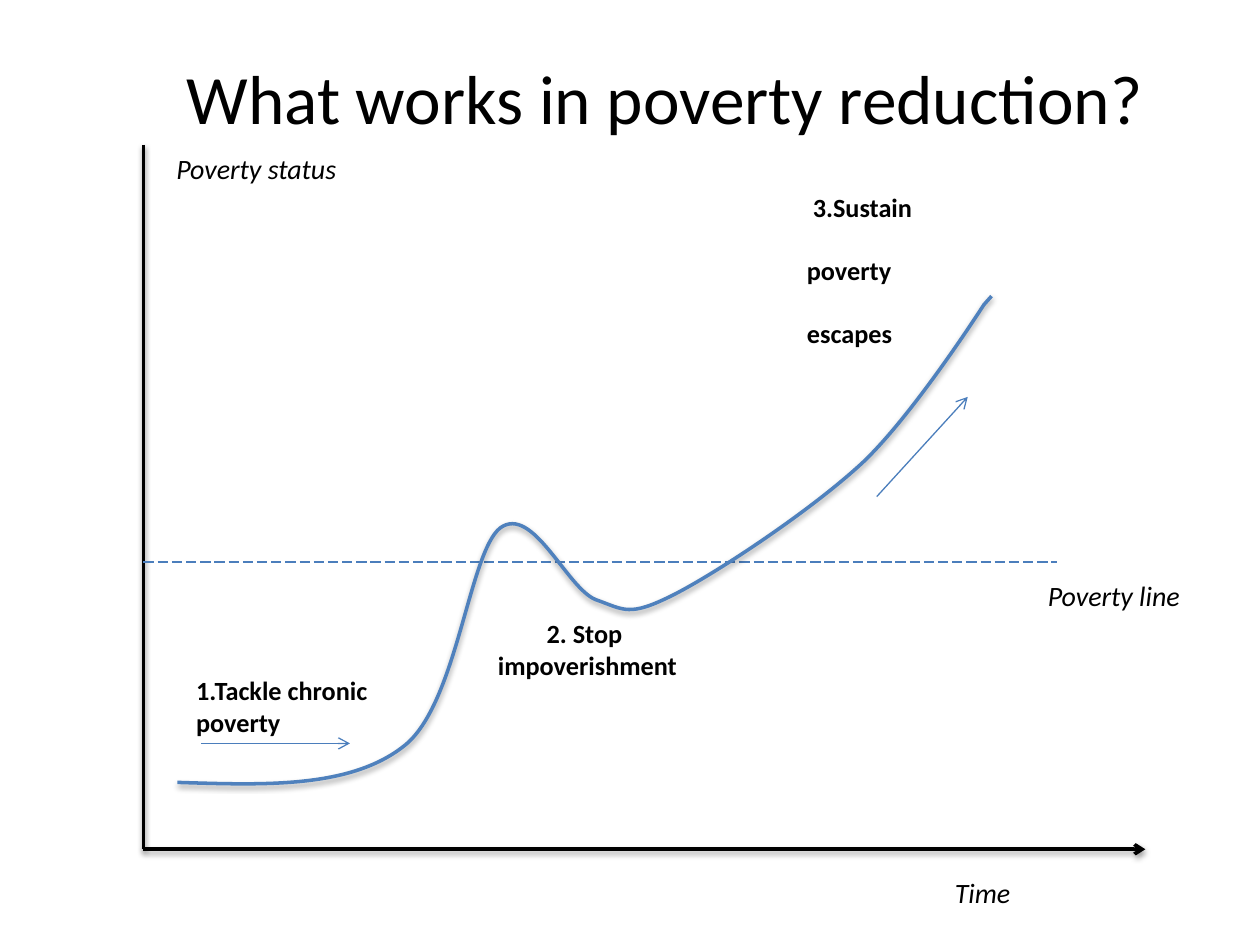
from lxml import etree
from pptx import Presentation
from pptx.dml.color import RGBColor
from pptx.enum.dml import MSO_LINE
from pptx.enum.shapes import MSO_CONNECTOR
from pptx.enum.text import MSO_ANCHOR, PP_ALIGN
from pptx.oxml import parse_xml
from pptx.oxml.ns import qn
from pptx.util import Pt

STRAIGHT = MSO_CONNECTOR.STRAIGHT
LONG_DASH = MSO_LINE.LONG_DASH
LEFT, CENTER = PP_ALIGN.LEFT, PP_ALIGN.CENTER
TOP, MIDDLE = MSO_ANCHOR.TOP, MSO_ANCHOR.MIDDLE

BLACK, BLUE, CURVE_BLUE = "000000", "4B7EBC", "4F81BD"
FONT = "Calibri"
SHADOW = (
    '<a:effectLst xmlns:a="http://schemas.openxmlformats.org/drawingml/2006/main">'
    '<a:outerShdw blurRad="40000" dist="20000" dir="5400000" rotWithShape="0">'
    '<a:srgbClr val="000000"><a:alpha val="38000"/></a:srgbClr>'
    '</a:outerShdw></a:effectLst>'
)

# Start point, then groups of two control points and an end point;
# what is left after the last whole group is straight.
CURVE = [
    (19.4, 364.3),
    (68.4, 365.8), (118.1, 367.9), (149, 343.4),
    (179.3, 319.7), (185.8, 233.3), (203.8, 218.9),
    (222.5, 205.2), (241.9, 253.4), (258.5, 259.9),
    (275, 265.7), (277.2, 270), (303.1, 257),
    (328.3, 244.1), (381.6, 208.8), (411.1, 181.4),
    (440.6, 153.4), (480.2, 91.4), (480.2, 91.4),
    (484.6, 86.4),
]


def color(hex_string):
    return RGBColor.from_string(hex_string)


def place(sp, x, y, w, h):
    sp.left, sp.top, sp.width, sp.height = Pt(x), Pt(y), Pt(w), Pt(h)


def write(sp, text, size=16, bold=False, italic=False, align=LEFT,
          anchor=TOP, wrap=True, gap=None):
    """Fill a shape with one paragraph per line, gap points apart."""
    tf = sp.text_frame
    tf.word_wrap = wrap
    tf.vertical_anchor = anchor
    for i, line in enumerate(text.split("\n")):
        p = tf.add_paragraph() if i else tf.paragraphs[0]
        p.alignment = align
        if i and gap:
            p.space_before = Pt(gap)
        r = p.add_run()
        r.text = line
        font = r.font
        font.name, font.size = FONT, Pt(size)
        font.bold, font.italic = bold, italic
        font.color.rgb = color(BLACK)


def add_label(slide, text, x, y, w, h, **style):
    sp = slide.shapes.add_textbox(Pt(x), Pt(y), Pt(w), Pt(h))
    write(sp, text, **style)


def add_line(slide, start, end, hex_color=BLUE, width=0.75, dash=None,
             arrow=False, shadow=False):
    s = slide.shapes.add_connector(STRAIGHT, *map(Pt, start + end))
    s.line.color.rgb = color(hex_color)
    s.line.width = Pt(width)
    if dash:
        s.line.dash_style = dash
    if arrow:
        etree.SubElement(s.line._get_or_add_ln(), qn("a:tailEnd"), type="arrow")
    sp_pr = s._element.spPr
    if shadow:
        sp_pr.append(parse_xml(SHADOW))
    else:
        etree.SubElement(sp_pr, qn("a:effectLst"))


def add_curve(slide, points):
    """Draw a freeform whose points are regrouped into cubic Béziers."""
    points = [(Pt(x), Pt(y)) for x, y in points]
    builder = slide.shapes.build_freeform(*points[0])
    builder.add_line_segments(points[1:], close=False)
    s = builder.convert_to_shape()
    s.fill.background()
    s.line.color.rgb = color(CURVE_BLUE)
    s.line.width = Pt(2)
    s._element.spPr.append(parse_xml(SHADOW))
    steps = list(s._element.iter(qn("a:lnTo")))
    for i in range(0, len(steps) - 2, 3):
        bezier = etree.Element(qn("a:cubicBezTo"))
        steps[i].addprevious(bezier)
        for step in steps[i:i + 3]:
            bezier.append(step[0])
            step.getparent().remove(step)


def add_heading(slide, x, y, w, h):
    title = slide.shapes.title
    place(title, x, y, w, h)
    write(title, "What works in poverty reduction?", size=39.6, anchor=MIDDLE)


def add_poverty_graph(slide, x, y, w, h):
    """Draw axes from the box's left and bottom edges, with curve and labels."""
    def at(dx, dy):
        return x + dx, y + dy

    status = slide.placeholders[1]
    place(status, *at(2, 0), 125, 57)
    write(status, "Poverty status", italic=True, align=CENTER)

    axis = {"hex_color": BLACK, "width": 2, "shadow": True}
    add_line(slide, at(0, 0), at(0, h), **axis)
    add_line(slide, at(0, h), at(w, h), arrow=True, **axis)
    add_line(slide, at(0, 238.3), at(522, 238.3), dash=LONG_DASH)

    add_line(slide, at(33, 342), at(118, 342), arrow=True)
    add_line(slide, at(419, 201), at(471, 144), arrow=True)
    stage = {"size": 15, "bold": True, "wrap": False}
    add_label(slide, "1.Tackle chronic\npoverty", *at(23, 299), 117, 44, **stage)
    add_label(slide, "2. Stop\n impoverishment", *at(191.5, 266.5), 121, 44,
              align=CENTER, **stage)
    add_label(slide, " 3.Sustain\npoverty\nescapes", *at(372, 23), 78.5, 98,
              gap=18, **stage)

    add_curve(slide, [at(*point) for point in CURVE])
    for text, dx, dy in (("Time", 417, 414), ("Poverty line", 492, 244)):
        add_label(slide, text, *at(dx, dy), 125, 28, italic=True, align=CENTER)


def main():
    prs = Presentation()
    prs.slide_width, prs.slide_height = Pt(720), Pt(540)
    slide = prs.slides.add_slide(prs.slide_layouts[0])
    add_heading(slide, 99.4, 21, 578, 68.4)
    add_poverty_graph(slide, 82, 82.8, 572.5, 402.5)
    prs.save("out.pptx")


if __name__ == "__main__":
    main()
